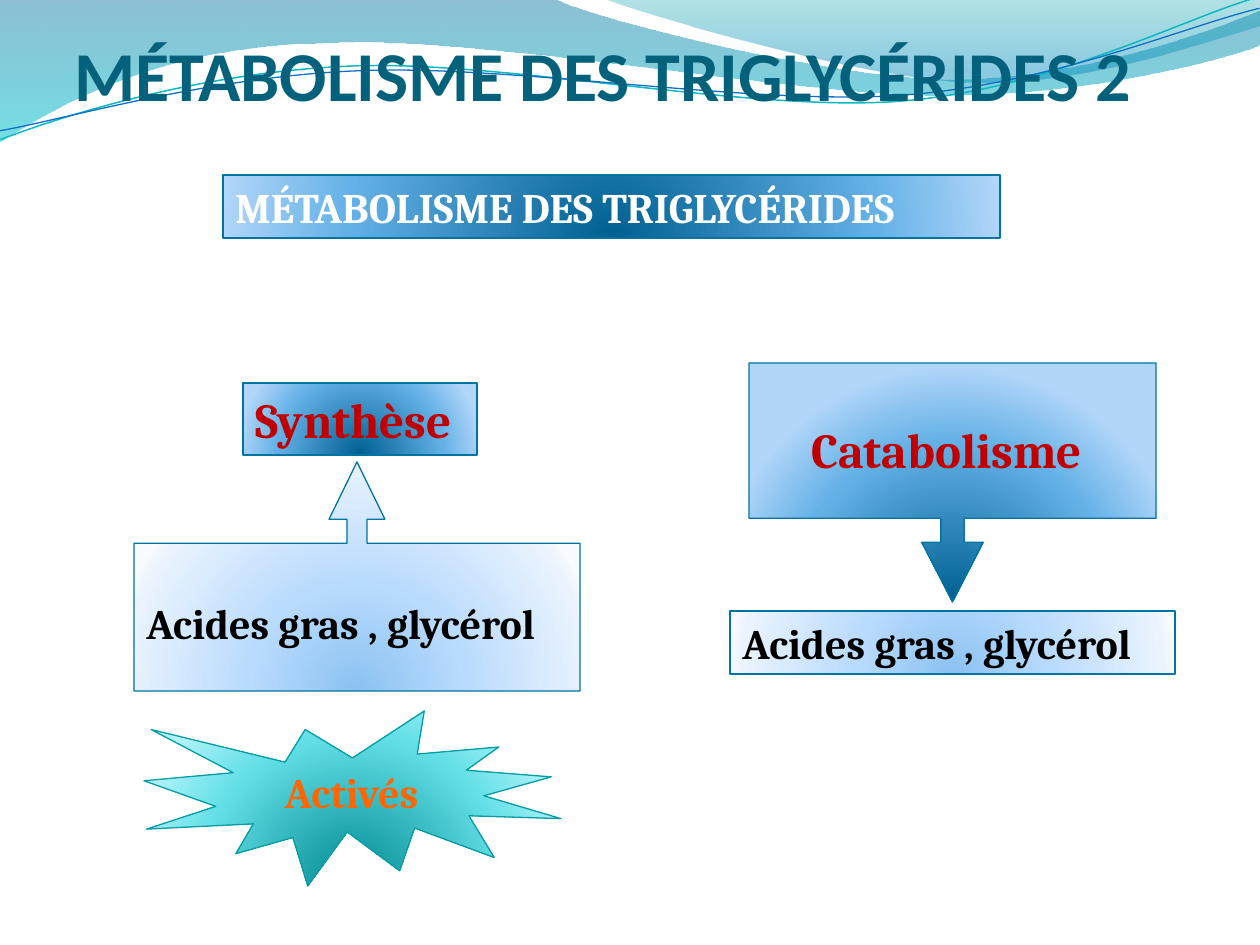
from dataclasses import dataclass
from typing import NamedTuple, Optional

from lxml.etree import SubElement
from pptx import Presentation
from pptx.dml.color import RGBColor
from pptx.enum.shapes import MSO_SHAPE as Preset
from pptx.enum.text import MSO_ANCHOR as Anchor, MSO_AUTO_SIZE as AutoSize, PP_ALIGN as Align
from pptx.oxml.ns import qn
from pptx.util import Emu, Pt

PX = 914400 / 126

WHITE = RGBColor(0xFF, 0xFF, 0xFF)
BLACK = RGBColor(0x00, 0x00, 0x00)
RED = RGBColor(0xC0, 0x00, 0x00)
ORANGE = RGBColor(0xFF, 0x66, 0x00)
TITLE_TEAL = RGBColor(0x04, 0x61, 0x7B)
BLUE_EDGE = RGBColor(0x00, 0x74, 0xA1)
TEAL_EDGE = RGBColor(0x06, 0x9C, 0xA3)
TEAL_WAVE = RGBColor(0x0A, 0xB8, 0xBF)
BLUE_WAVE = RGBColor(0x0F, 0x6F, 0xC6)


class Stop(NamedTuple):
    position: int
    color: RGBColor
    opacity: int = 100


class Box(NamedTuple):
    left: int
    top: int
    width: int
    height: int

    def emu(self) -> list:
        return [Emu(round(side * PX)) for side in self]


@dataclass
class Wave:
    points: list  # pairs are line ends, sextets are Bézier curves
    stops: Optional[list] = None
    edge: Optional[RGBColor] = None
    weight: float = 0
    rotation: float = 0


@dataclass
class Panel:
    box: Box
    preset: Preset
    stops: list
    edge: RGBColor = BLUE_EDGE
    adjustments: tuple = ()


@dataclass
class Label:
    text: str
    size: int
    color: RGBColor
    box: Optional[Box] = None


DEEP_BLUE = [Stop(0, RGBColor(0x00, 0x60, 0x91)), Stop(68, RGBColor(0x64, 0xB1, 0xE7)),
             Stop(100, RGBColor(0xB1, 0xD6, 0xF9))]
PALE_BLUE = [Stop(0, RGBColor(0x8B, 0xC2, 0xF1)), Stop(43, RGBColor(0xB9, 0xDB, 0xFD)),
             Stop(93, RGBColor(0xEA, 0xF3, 0xFE)), Stop(100, RGBColor(0xF8, 0xFB, 0xFF))]
TURQUOISE = [Stop(0, RGBColor(0x00, 0x8A, 0x91)), Stop(68, RGBColor(0x64, 0xDF, 0xE7)),
             Stop(100, RGBColor(0xB1, 0xF3, 0xF9))]

WAVES = [
    Wave([(0, 0), (554, -1), (600, 21, 837, 79, 955, 79), (1075, 79, 1207, 33, 1260, 11),
          (1261, 45), (1239, 55, 1096, 96, 940, 95), (784, 95, 481, 35, 324, 43),
          (163, 45, 58, 105, -1, 142)],
         [Stop(0, BLUE_EDGE, 45), Stop(100, RGBColor(0x00, 0xC6, 0xCF), 55)]),
    Wave([(604, -1), (641, 14, 859, 78, 969, 82), (1079, 87, 1211, 40, 1260, 26), (1260, 0)],
         [Stop(0, RGBColor(0x00, 0xA1, 0xA9), 30), Stop(80, RGBColor(0x00, 0x8B, 0xBF), 45)]),
    Wave([(-2, 110), (58, 90, 200, 52, 350, 53), (499, 53, 745, 118, 896, 114),
          (1048, 110, 1184, 45, 1260, 27)], edge=TEAL_WAVE, weight=0.85, rotation=357.3),
    Wave([(-2, 101), (57, 94, 207, 57, 357, 58), (509, 58, 750, 112, 902, 108),
          (1052, 104, 1188, 52, 1262, 38)], edge=BLUE_WAVE, weight=0.75, rotation=357.3),
]

CALLOUTS = [
    Panel(Box(749, 363, 407, 239), Preset.DOWN_ARROW_CALLOUT, DEEP_BLUE,
          adjustments=(0.097, 0.129, 0.25, 0.65)),
    Panel(Box(144, 711, 417, 175), Preset.EXPLOSION1, TURQUOISE, TEAL_EDGE),
    Panel(Box(134, 462, 446, 229), Preset.UP_ARROW_CALLOUT, PALE_BLUE,
          adjustments=(0.087, 0.122, 0.25, 0.645)),
]

FATTY_ACIDS = "Acides gras , glycérol"
BANNERS = [
    (Panel(Box(223, 175, 777, 63), Preset.RECTANGLE, DEEP_BLUE),
     Label("MÉTABOLISME DES TRIGLYCÉRIDES", 24, WHITE)),
    (Panel(Box(243, 383, 234, 72), Preset.RECTANGLE, DEEP_BLUE), Label("Synthèse", 28, RED)),
    (Panel(Box(730, 611, 445, 63), Preset.RECTANGLE, PALE_BLUE), Label(FATTY_ACIDS, 24, BLACK)),
]

CALLOUT_LABELS = [
    Label(FATTY_ACIDS, 24, BLACK, Box(134, 591, 445, 63)),
    Label(" Activés", 24, ORANGE, Box(263, 760, 176, 63)),
    Label("Catabolisme", 28, RED, Box(799, 413, 318, 72)),
]


def fill_gradient(shape, stops: list, radial: bool) -> None:
    shape.fill.background()
    properties = shape._element.spPr
    empty_fill = properties.find(qn("a:noFill"))
    gradient = properties.makeelement(qn("a:gradFill"), {"rotWithShape": "1"})
    stop_list = SubElement(gradient, qn("a:gsLst"))
    for stop in stops:
        mark = SubElement(stop_list, qn("a:gs"), pos=str(stop.position * 1000))
        color = SubElement(mark, qn("a:srgbClr"), val=str(stop.color))
        if stop.opacity < 100:
            SubElement(color, qn("a:alpha"), val=str(stop.opacity * 1000))
    if radial:
        circle = SubElement(gradient, qn("a:path"), path="circle")
        SubElement(circle, qn("a:fillToRect"), l="50000", t="130000", r="50000", b="-30000")
    else:
        SubElement(gradient, qn("a:lin"), ang="5400000", scaled="1")
    properties.replace(empty_fill, gradient)


def bend(ribbon, points: list) -> None:
    """Merge the three straight steps of each sextet into one Bézier curve."""
    steps = iter(list(ribbon._element.spPr.iter(qn("a:lnTo"))))
    for point in points:
        first = next(steps)
        if len(point) == 6:
            curve = first.makeelement(qn("a:cubicBezTo"), {})
            first.addprevious(curve)
            for step in (first, next(steps), next(steps)):
                curve.append(step[0])
                step.getparent().remove(step)


def draw_wave(shapes, wave: Wave) -> None:
    start, *rest = wave.points
    outline = shapes.build_freeform(*start, scale=PX)
    corners = [point[i:i + 2] for point in rest for i in range(0, len(point), 2)]
    outline.add_line_segments(corners, close=wave.stops is not None)
    ribbon = outline.convert_to_shape()
    bend(ribbon, rest)
    ribbon.rotation = wave.rotation
    ribbon.shadow.inherit = False
    if wave.stops:
        fill_gradient(ribbon, wave.stops, radial=False)
        ribbon.line.fill.background()
    else:
        ribbon.fill.background()
        ribbon.line.color.rgb = wave.edge
        ribbon.line.width = Pt(wave.weight)


def draw_panel(shapes, panel: Panel):
    shape = shapes.add_shape(panel.preset, *panel.box.emu())
    for index, value in enumerate(panel.adjustments):
        shape.adjustments[index] = value
    shape.shadow.inherit = False
    fill_gradient(shape, panel.stops, radial=True)
    shape.line.color.rgb = panel.edge
    shape.line.width = Pt(0.75)
    return shape


def write(frame, label: Label, font_name: str = "Cambria", **frame_format) -> None:
    layout = {"word_wrap": False, "auto_size": AutoSize.SHAPE_TO_FIT_TEXT,
              "vertical_anchor": Anchor.TOP, **frame_format}
    for name, value in layout.items():
        setattr(frame, name, value)
    paragraph = frame.paragraphs[0]
    paragraph.alignment = Align.LEFT
    run = paragraph.add_run()
    run.text = label.text
    for name, value in {"name": font_name, "size": Pt(label.size), "bold": True}.items():
        setattr(run.font, name, value)
    run.font.color.rgb = label.color


def main() -> None:
    deck = Presentation()
    deck.slide_width, deck.slide_height = (Emu(round(side * PX)) for side in (1260, 945))
    slide = deck.slides.add_slide(deck.slide_layouts[5])
    shapes = slide.shapes

    # Wave decoration and callouts
    for wave in WAVES:
        draw_wave(shapes, wave)
    for callout in CALLOUTS:
        draw_panel(shapes, callout)

    # Title, in front of the waves
    title = shapes.title
    title.left, title.top, title.width, title.height = Box(74, -43, 1092, 159).emu()
    write(title.text_frame, Label("MÉTABOLISME DES TRIGLYCÉRIDES 2", 40, TITLE_TEAL), "Calibri",
          word_wrap=True, auto_size=AutoSize.NONE, vertical_anchor=Anchor.BOTTOM,
          margin_left=0, margin_right=0, margin_bottom=0)
    shapes._spTree.append(title._element)

    # Banners and callout labels
    for panel, label in BANNERS:
        write(draw_panel(shapes, panel).text_frame, label)
    for label in CALLOUT_LABELS:
        write(shapes.add_textbox(*label.box.emu()).text_frame, label)

    deck.save("out.pptx")


if __name__ == "__main__":
    main()
